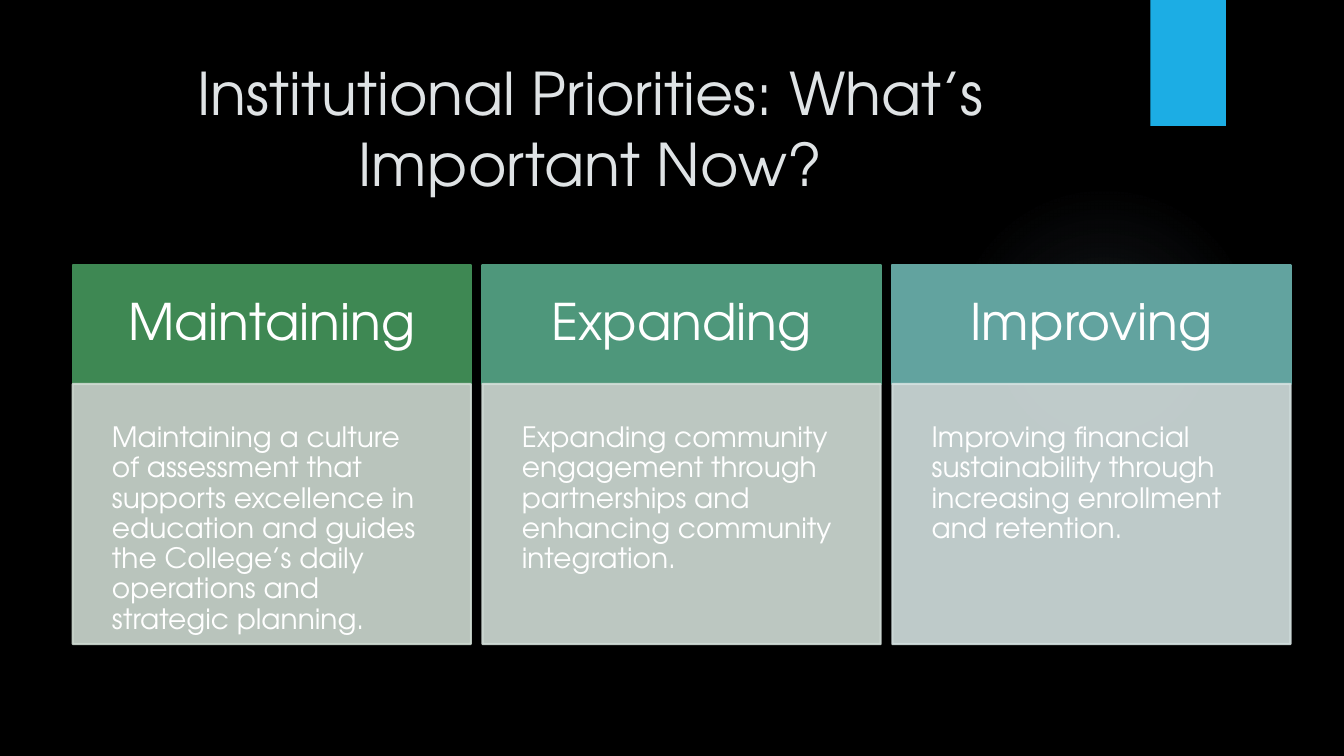
from dataclasses import dataclass

from lxml import etree
from pptx import Presentation
from pptx.dml.color import RGBColor
from pptx.enum.shapes import MSO_SHAPE
from pptx.enum.text import MSO_ANCHOR, MSO_AUTO_SIZE, PP_ALIGN
from pptx.oxml import parse_xml
from pptx.oxml.ns import nsdecls, qn
from pptx.util import Inches, Pt

RECT, OVAL = MSO_SHAPE.RECTANGLE, MSO_SHAPE.OVAL
TOP, MIDDLE = MSO_ANCHOR.TOP, MSO_ANCHOR.MIDDLE
LEFT, CENTER = PP_ALIGN.LEFT, PP_ALIGN.CENTER
NO_FIT = MSO_AUTO_SIZE.NONE


@dataclass(frozen=True)
class Theme:
    font: str = "TeX Gyre Adventor"
    background: str = "000000"
    title: str = "DFE3E5"
    text: str = "FFFFFF"
    accent: str = "1CADE4"
    glow: str = "A0C1D5"
    title_size: int = 42
    head_size: int = 36
    body_size: int = 20


THEME = Theme()

PRIORITIES = [
    ("Maintaining", "3E8853", "CEDAD1",
     "Maintaining a culture of assessment that supports excellence in education "
     "and guides the College’s daily operations and strategic planning."),
    ("Expanding", "4E977B", "D1DDD7",
     "Expanding community engagement through partnerships and enhancing "
     "community integration."),
    ("Improving", "62A39F", "D3E0DF",
     "Improving financial sustainability through increasing enrollment and "
     "retention."),
]


def rgb(color):
    return RGBColor.from_string(color)


def set_alpha(fill_element, percent):
    color = fill_element.find(".//" + qn("a:srgbClr"))
    etree.SubElement(color, qn("a:alpha")).set("val", str(percent * 1000))


def add_text(tf, text, size, color, align, anchor, inset):
    tf.word_wrap = True
    tf.auto_size = NO_FIT
    tf.vertical_anchor = anchor
    tf.margin_left = tf.margin_right = Inches(inset)
    tf.margin_top = tf.margin_bottom = Inches(inset)
    p = tf.paragraphs[0]
    p.alignment = align
    r = p.add_run()
    r.text = text
    r.font.name = THEME.font
    r.font.size = Pt(size)
    r.font.color.rgb = rgb(color)
    return p


def add_block(s, kind, box, color):
    sp = s.shapes.add_shape(kind, *map(Inches, box))
    sp.shadow.inherit = False
    sp.fill.solid()
    sp.fill.fore_color.rgb = rgb(color)
    sp.line.fill.background()
    return sp


def add_panel(s, box, color, text, size, align, anchor, inset, alpha=100):
    sp = add_block(s, RECT, box, color)
    sp.line.color.rgb = rgb(color)
    sp.line.width = Pt(1.5)
    if alpha < 100:
        spPr = sp._element.spPr
        set_alpha(spPr.find(qn("a:solidFill")), alpha)
        set_alpha(spPr.find(qn("a:ln")), alpha)
    p = add_text(sp.text_frame, text, size, THEME.text, align, anchor, inset)
    p.line_spacing = 0.9


def add_glow(s, box):
    sp = add_block(s, OVAL, box, THEME.glow)
    stops = "".join(
        f'<a:gs pos="{pos * 1000}"><a:srgbClr val="{THEME.glow}">'
        f'<a:alpha val="{alpha * 1000}"/></a:srgbClr></a:gs>'
        for pos, alpha in [(0, 7), (36, 6), (69, 0), (100, 0)])
    grad = parse_xml(
        f'<a:gradFill {nsdecls("a")} rotWithShape="1"><a:gsLst>{stops}</a:gsLst>'
        '<a:path path="circle"><a:fillToRect l="50000" t="50000" r="50000" '
        'b="50000"/></a:path></a:gradFill>')
    spPr = sp._element.spPr
    spPr.replace(spPr.find(qn("a:solidFill")), grad)


def add_title(s, box, text):
    sp = s.shapes.title
    sp.left, sp.top, sp.width, sp.height = map(Inches, box)
    add_text(sp.text_frame, text, THEME.title_size, THEME.title, CENTER, MIDDLE, 0.1)


def add_columns(s, box, priorities, col_w=3.95, head_h=1.18):
    left, top, width, height = box
    pitch = (width - col_w) / (len(priorities) - 1)
    for i, (head, dark, light, body) in enumerate(priorities):
        x = left + i * pitch
        add_panel(s, (x, top, col_w, head_h), dark, head,
                  THEME.head_size, CENTER, MIDDLE, 0.31)
        add_panel(s, (x, top + head_h, col_w, height - head_h), light, body,
                  THEME.body_size, LEFT, TOP, 0.39, alpha=90)


def build_priorities_slide(prs):
    s = prs.slides.add_slide(prs.slide_layouts[5])
    s.background.fill.solid()
    s.background.fill.fore_color.rgb = rgb(THEME.background)
    add_glow(s, (9.41, 1.83, 3.08, 3.08))
    add_block(s, RECT, (11.41, 0, 0.75, 1.25), THEME.accent)
    add_title(s, (0.71, 0.5, 10.29, 1.53),
              "Institutional Priorities: What’s Important Now?")
    add_columns(s, (0.72, 2.63, 12.08, 3.76), PRIORITIES)


def main():
    prs = Presentation()
    prs.slide_width, prs.slide_height = Inches(13.33), Inches(7.5)
    build_priorities_slide(prs)
    prs.save("out.pptx")


if __name__ == "__main__":
    main()
